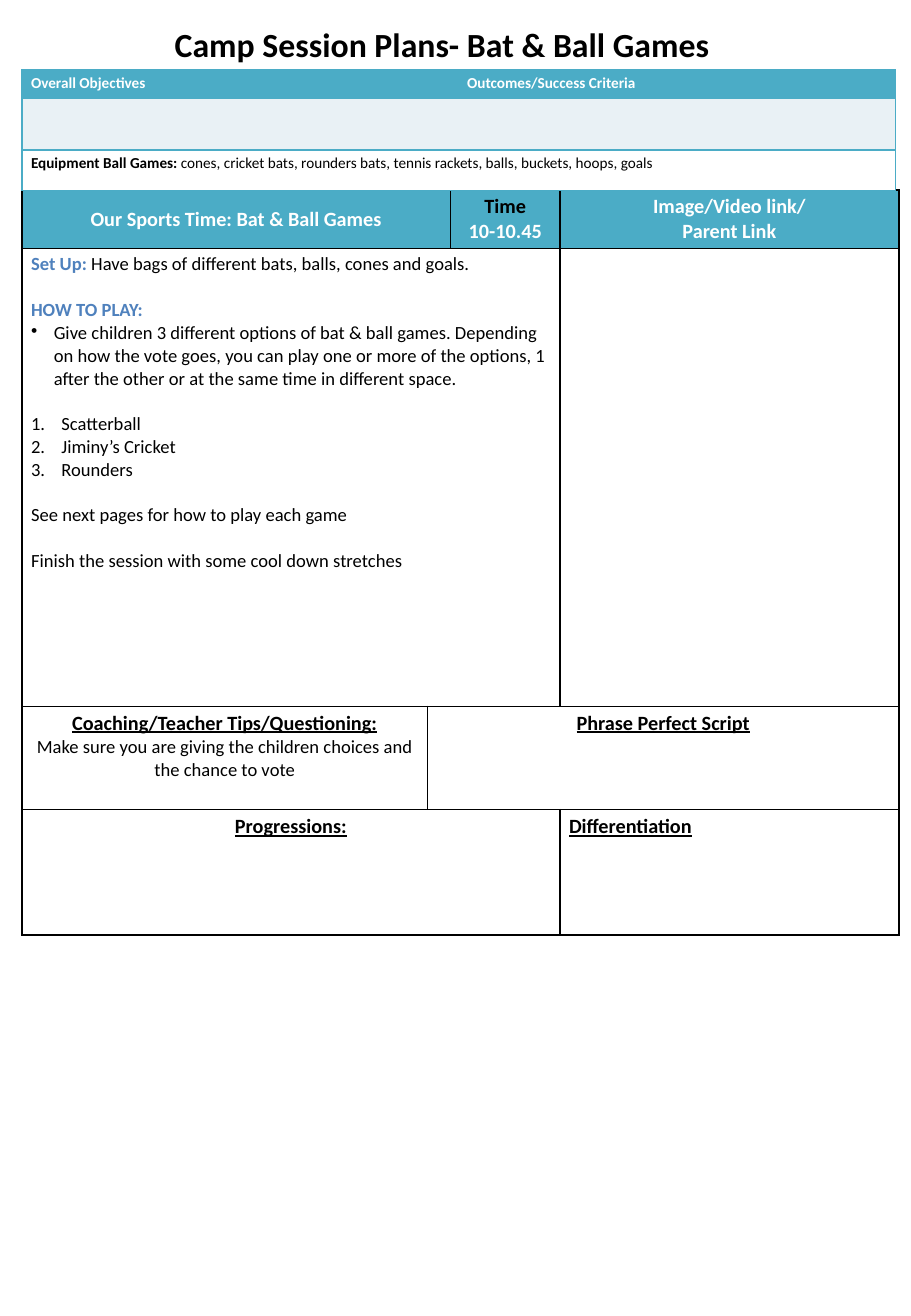
"""Build the one-page camp session plan for bat and ball games."""
from dataclasses import dataclass

from pptx import Presentation
from pptx.dml.color import RGBColor
from pptx.enum.text import MSO_ANCHOR as Anchor, MSO_AUTO_SIZE as AutoSize, PP_ALIGN as Align
from pptx.oxml.xmlchemy import OxmlElement
from pptx.util import Pt

BLACK, WHITE, TEAL, BLUE, PALE = "000000", "FFFFFF", "4BACC6", "4F81BD", "E9F1F5"
HEADING = {"size": Pt(12), "bold": True}
UNDERLINED = HEADING | {"underline": True}
BODY = {"size": Pt(11), "bold": False}
LABEL = {"size": Pt(11), "bold": True}
SMALL = {"size": Pt(9), "bold": False}
SMALL_BOLD = {"size": Pt(9), "bold": True}
INSETS = {"margin_left": Pt(5.4), "margin_right": Pt(5.4),
          "margin_top": Pt(2.7), "margin_bottom": Pt(2.7)}
GAP = 13.4


@dataclass
class Span:
    text: str
    style: dict
    colour: str = BLACK


@dataclass
class Line:
    spans: list[Span]
    align: Align = Align.LEFT
    before: float = 0
    indent: float = 0
    bullet: tuple[str, dict[str, str]] | None = None


@dataclass
class Box:
    row: int
    column: int
    lines: list[Line]
    width: int = 1
    fill: str | None = None
    anchor: Anchor = Anchor.TOP
    sides: str = "LRTB"


@dataclass
class Grid:
    left: float
    top: float
    columns: list[float]
    rows: list[float]
    border: str
    boxes: list[Box]


def rgb(colour: str) -> RGBColor:
    return RGBColor.from_string(colour)


def line(text: str, style: dict, colour: str = BLACK, **layout) -> Line:
    return Line([Span(text, style, colour)], **layout)


def centred(text: str, style: dict, colour: str = BLACK) -> Line:
    return line(text, style, colour, align=Align.CENTER)


def game(text: str, before: float = 0) -> Line:
    return line(text, BODY, before=before, indent=18,
                bullet=("a:buAutoNum", {"type": "arabicPeriod"}))


def write(frame, lines: list[Line]) -> None:
    for index, item in enumerate(lines):
        paragraph = frame.add_paragraph() if index else frame.paragraphs[0]
        paragraph.alignment = item.align
        paragraph.space_before = Pt(item.before)
        if item.bullet:
            tag, values = item.bullet
            properties = paragraph._p.get_or_add_pPr()
            properties.set("marL", str(Pt(item.indent)))
            properties.set("indent", str(-Pt(item.indent)))
            mark = OxmlElement(tag)
            for key, value in values.items():
                mark.set(key, value)
            properties.append(mark)
        for span in item.spans:
            run = paragraph.add_run()
            run.text = span.text
            for key, value in ({"name": "Calibri"} | span.style).items():
                setattr(run.font, key, value)
            run.font.color.rgb = rgb(span.colour)


def draw_borders(cell, sides: str, colour: str) -> None:
    properties = cell._tc.get_or_add_tcPr()
    for side in "LRTB":
        edge = OxmlElement(f"a:ln{side}")
        edge.set("w", str(Pt(1)))
        paint = OxmlElement("a:solidFill" if side in sides else "a:noFill")
        if side in sides:
            shade = OxmlElement("a:srgbClr")
            shade.set("val", colour)
            paint.append(shade)
        edge.append(paint)
        properties.append(edge)


def draw_grid(slide, grid: Grid) -> None:
    table = slide.shapes.add_table(
        len(grid.rows), len(grid.columns), Pt(grid.left), Pt(grid.top),
        Pt(sum(grid.columns)), Pt(sum(grid.rows))).table
    table.first_row = table.horz_banding = False
    for column, width in zip(table.columns, grid.columns):
        column.width = Pt(width)
    for row, height in zip(table.rows, grid.rows):
        row.height = Pt(height)
    for box in grid.boxes:
        last = box.column + box.width - 1
        for column in range(box.column, last + 1):
            cell = table.cell(box.row, column)
            draw_borders(cell, box.sides, grid.border)
            if box.fill:
                cell.fill.solid()
                cell.fill.fore_color.rgb = rgb(box.fill)
            else:
                cell.fill.background()
        origin = table.cell(box.row, box.column)
        if box.width > 1:
            origin.merge(table.cell(box.row, last))
        for key, value in (INSETS | {"vertical_anchor": box.anchor}).items():
            setattr(origin, key, value)
        write(origin.text_frame, box.lines)


SESSION_STEPS = [
    Line([Span("Set Up: ", LABEL, BLUE),
          Span("Have bags of different bats, balls, cones and goals.", BODY)]),
    line("HOW TO PLAY:", LABEL, BLUE, before=GAP),
    line("Give children 3 different options of bat & ball games. Depending on how the "
         "vote goes, you can play one or more of the options, 1 after the other or at "
         "the same time in different space.", BODY, indent=13.5,
         bullet=("a:buChar", {"char": "•"})),
    game("Scatterball", GAP), game("Jiminy’s Cricket"), game("Rounders"),
    line("See next pages for how to play each game", BODY, before=GAP),
    line("Finish the session with some cool down stretches", BODY, before=GAP),
]

SESSION = Grid(13, 112.5, [240.5, 11.5, 64.8, 200.9], [33.5, 271.4, 61.2, 74.2], BLACK, [
    Box(0, 0, [centred("Our Sports Time: Bat & Ball Games", HEADING, WHITE)],
        2, TEAL, Anchor.MIDDLE),
    Box(0, 2, [centred("Time", HEADING), centred("10-10.45", HEADING, WHITE)],
        1, TEAL, Anchor.MIDDLE),
    Box(0, 3, [centred("Image/Video link/", HEADING, WHITE),
               centred("Parent Link", HEADING, WHITE)], 1, TEAL, Anchor.MIDDLE),
    Box(1, 0, SESSION_STEPS, 3),
    Box(1, 3, []),
    Box(2, 0, [centred("Coaching/Teacher Tips/Questioning:", UNDERLINED),
               centred("Make sure you are giving the children choices and the chance "
                       "to vote", BODY)]),
    Box(2, 1, [centred("Phrase Perfect Script", UNDERLINED)], 3),
    Box(3, 0, [centred("Progressions:", UNDERLINED)], 3),
    Box(3, 3, [line("Differentiation", UNDERLINED)]),
])

OBJECTIVES = Grid(13, 41.4, [258.5, 259.2], [16.6, 30.8, 24.2], TEAL, [
    Box(0, 0, [line("Overall Objectives", SMALL_BOLD, WHITE)], fill=TEAL, sides="LTB"),
    Box(0, 1, [line("Outcomes/Success Criteria", SMALL_BOLD, WHITE)], fill=TEAL, sides="RTB"),
    Box(1, 0, [], fill=PALE, sides="LTB"),
    Box(1, 1, [], fill=PALE, sides="RTB"),
    Box(2, 0, [Line([Span("Equipment Ball Games: ", SMALL_BOLD),
                     Span("cones, cricket bats, rounders bats, tennis rackets, balls, "
                          "buckets, hoops, goals", SMALL)])], 2, WHITE),
])


def main() -> None:
    deck = Presentation()
    deck.slide_width, deck.slide_height = Pt(540), Pt(779.76)
    slide = deck.slides.add_slide(deck.slide_layouts[5])
    heading = slide.shapes.title
    for key, value in {"left": 13, "top": 10.1, "width": 498.2, "height": 31.7}.items():
        setattr(heading, key, Pt(value))
    heading.text_frame.auto_size = AutoSize.NONE
    heading.text_frame.vertical_anchor = Anchor.MIDDLE
    write(heading.text_frame, [centred("Camp Session Plans- Bat & Ball Games",
                                       {"size": Pt(20), "bold": True})])
    for grid in (SESSION, OBJECTIVES):
        draw_grid(slide, grid)
    deck.save("out.pptx")


if __name__ == "__main__":
    main()
